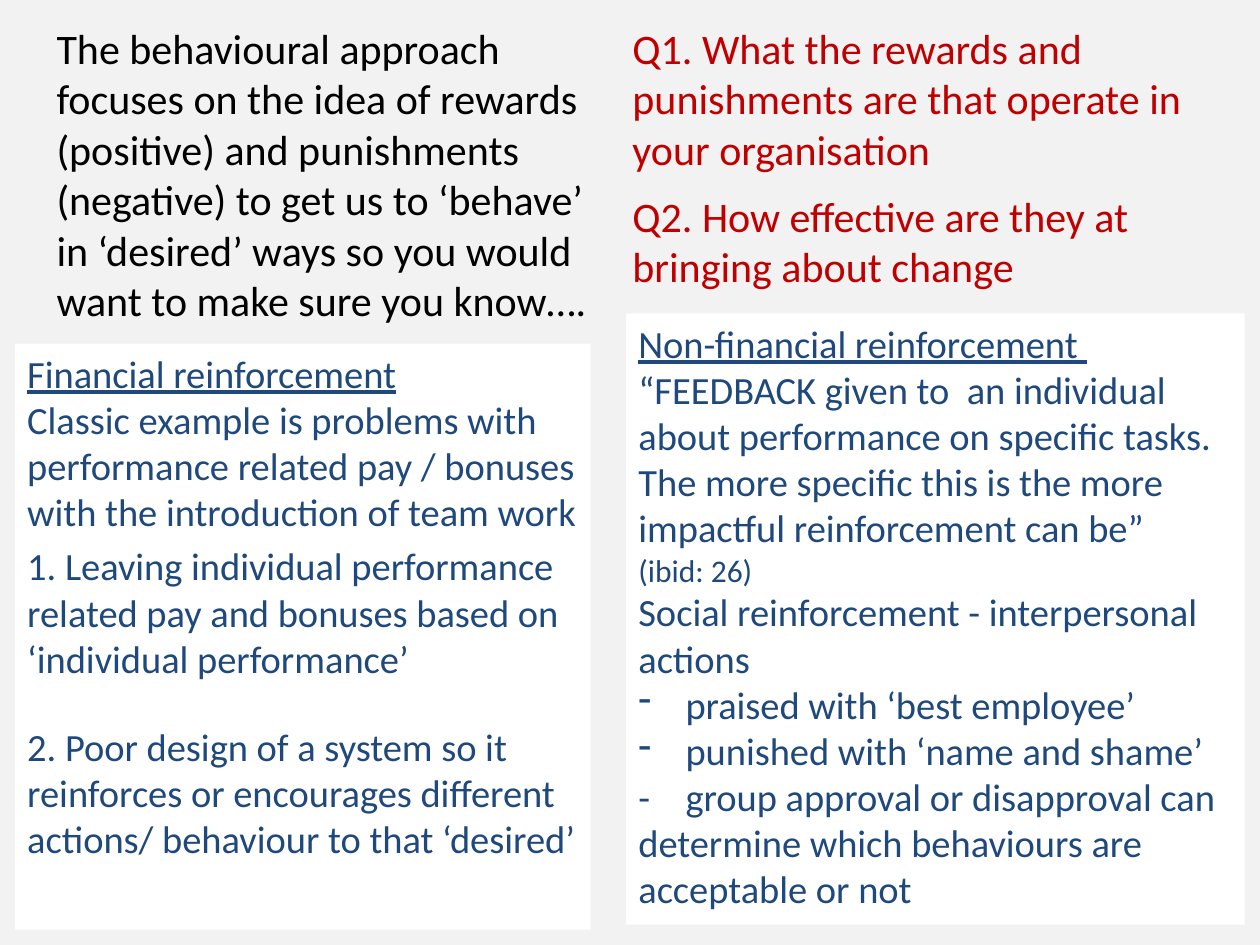
from dataclasses import dataclass

import pptx
import pptx.dml.color
import pptx.enum.shapes
import pptx.enum.text
import pptx.oxml.ns
import pptx.util
from lxml import etree
from pptx.util import Cm


def rgb(value):
    return pptx.dml.color.RGBColor.from_string(value)


@dataclass(frozen=True)
class Theme:
    font: str = "Calibri"
    background: str = "F2F2F2"
    panel: str = "FFFFFF"
    intro: str = "000000"
    question: str = "C00000"
    detail: str = "1F497D"
    lead_size: int = 24
    detail_size: int = 22
    citation_size: int = 18


@dataclass(frozen=True)
class Line:
    text: str
    size: int = 0  # 0 takes the size of the block
    underline: bool = False
    space_before: float = 0
    dash: bool = False
    tabbed: bool = False


THEME = Theme()
HANG = Cm(0.95)

INTRO = [Line(
    "The behavioural approach focuses on the idea of rewards (positive) and "
    "punishments (negative) to get us to ‘behave’ in ‘desired’ ways so you "
    "would want to make sure you know….")]

QUESTIONS = [
    Line("Q1. What the rewards and punishments are that operate in your organisation"),
    Line("Q2. How effective are they at bringing about change", space_before=9.6),
]

FINANCIAL = [
    Line("Financial reinforcement", underline=True),
    Line("Classic example is problems with performance related pay / bonuses "
         "with the introduction of team work"),
    Line("1. Leaving individual performance related pay and bonuses based on "
         "‘individual performance’", space_before=4.4),
    Line("2. Poor design of a system so it reinforces or encourages different "
         "actions/ behaviour to that ‘desired’", space_before=24),
]

NON_FINANCIAL = [
    Line("Non-financial reinforcement ", underline=True),
    Line("“FEEDBACK given to  an individual about performance on specific tasks. "
         "The more specific this is the more impactful reinforcement can be”"),
    Line("(ibid: 26)", size=THEME.citation_size),
    Line("Social reinforcement - interpersonal actions"),
    Line("praised with ‘best employee’", dash=True),
    Line("punished with ‘name and shame’", dash=True),
    Line("-\tgroup approval or disapproval can determine which behaviours are "
         "acceptable or not", tabbed=True),
]


def add_dash(paragraph):
    """Give the paragraph a hanging dash bullet."""
    properties = paragraph._p.get_or_add_pPr()
    properties.set("marL", str(HANG))
    properties.set("indent", str(-HANG))
    etree.SubElement(properties, pptx.oxml.ns.qn("a:buChar"), char="-")


def add_tab_stop(paragraph):
    """Align text after a tab with the text of the dash bullets."""
    stops = etree.SubElement(paragraph._p.get_or_add_pPr(), pptx.oxml.ns.qn("a:tabLst"))
    etree.SubElement(stops, pptx.oxml.ns.qn("a:tab"), pos=str(HANG), algn="l")


def write_lines(frame, lines, size, color):
    frame.word_wrap = True
    frame.vertical_anchor = pptx.enum.text.MSO_ANCHOR.TOP
    for index, line in enumerate(lines):
        paragraph = frame.add_paragraph() if index else frame.paragraphs[0]
        paragraph.alignment = pptx.enum.text.PP_ALIGN.LEFT
        paragraph.space_before = pptx.util.Pt(line.space_before)
        if line.dash:
            add_dash(paragraph)
        if line.tabbed:
            add_tab_stop(paragraph)
        run = paragraph.add_run()
        run.text = line.text
        run.font.name = THEME.font
        run.font.size = pptx.util.Pt(line.size or size)
        run.font.underline = line.underline
        run.font.color.rgb = rgb(color)


def add_lead(slide, box, lines, color):
    lead = slide.shapes.add_textbox(*map(Cm, box))
    write_lines(lead.text_frame, lines, THEME.lead_size, color)


def add_panel(slide, box, lines):
    panel = slide.shapes.add_shape(
        pptx.enum.shapes.MSO_SHAPE.RECTANGLE, *map(Cm, box))
    panel.shadow.inherit = False
    panel.fill.solid()
    panel.fill.fore_color.rgb = rgb(THEME.panel)
    panel.line.fill.background()
    write_lines(panel.text_frame, lines, THEME.detail_size, THEME.detail)


def main():
    deck = pptx.Presentation()
    deck.slide_width, deck.slide_height = Cm(25.4), Cm(19.05)
    slide = deck.slides.add_slide(deck.slide_layouts[6])
    slide.background.fill.solid()
    slide.background.fill.fore_color.rgb = rgb(THEME.background)

    add_lead(slide, (0.89, 0.33, 11.23, 15.49), INTRO, THEME.intro)
    add_panel(slide, (0.3, 6.93, 11.61, 11.81), FINANCIAL)
    add_lead(slide, (12.5, 0.33, 11.81, 5.74), QUESTIONS, THEME.question)
    add_panel(slide, (12.62, 6.32, 12.47, 12.32), NON_FINANCIAL)
    deck.save("out.pptx")


if __name__ == "__main__":
    main()
